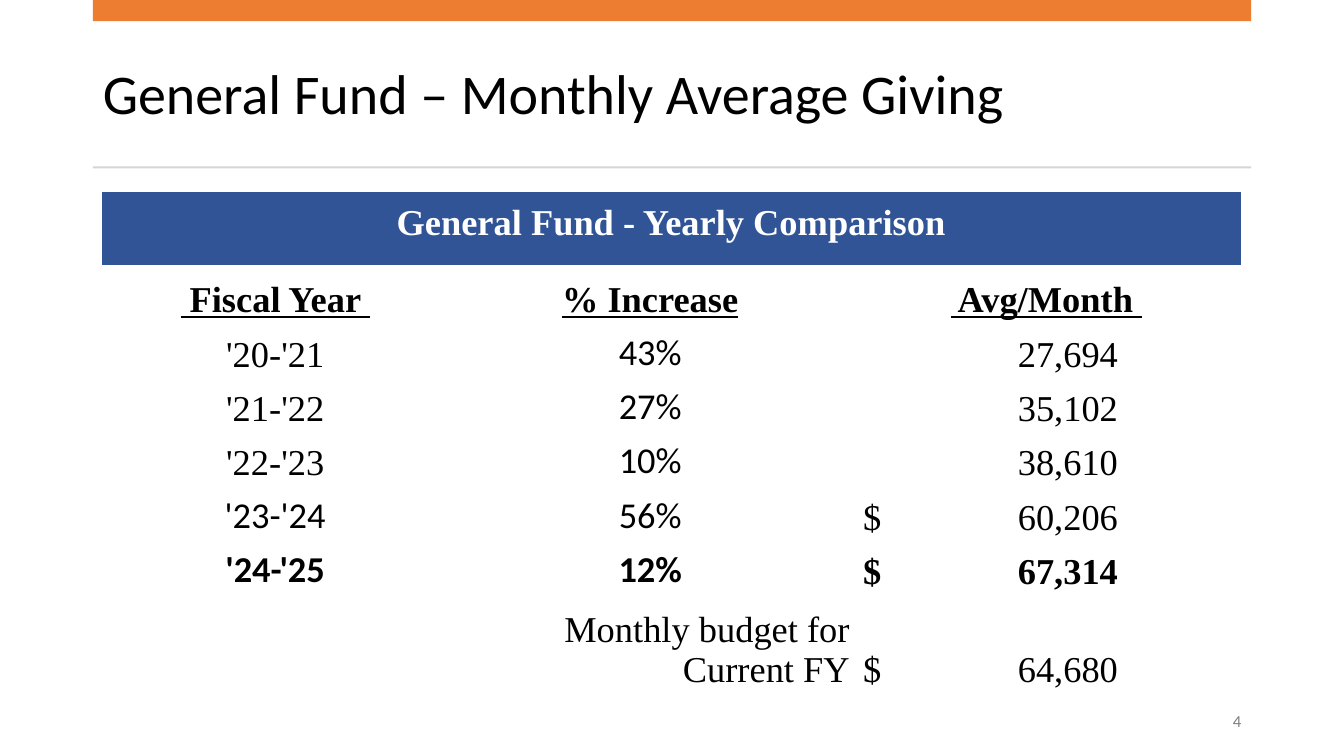
from dataclasses import dataclass

from lxml import etree
from pptx import Presentation
from pptx.dml.color import RGBColor
from pptx.enum.shapes import MSO_SHAPE
from pptx.enum.text import MSO_ANCHOR, MSO_AUTO_SIZE, PP_ALIGN
from pptx.oxml.ns import qn
from pptx.util import Inches, Pt

RECT = MSO_SHAPE.RECTANGLE
LEFT, MID, RIGHT = PP_ALIGN.LEFT, PP_ALIGN.CENTER, PP_ALIGN.RIGHT
TOP, CENTER, BOTTOM = MSO_ANCHOR.TOP, MSO_ANCHOR.MIDDLE, MSO_ANCHOR.BOTTOM
NO_FIT = MSO_AUTO_SIZE.NONE


@dataclass(frozen=True)
class Theme:
    sans: str = "Calibri"
    serif: str = "Times New Roman"
    black: str = "000000"
    white: str = "FFFFFF"
    gray: str = "808080"
    rule: str = "D5D5D5"
    orange: str = "ED7D31"
    blue: str = "305496"
    title: int = 40
    body: int = 26
    small: int = 12


theme = Theme()


def write(frame, text, font=theme.serif, size=theme.body, color=theme.black,
          bold=False, line=False, align=MID, space=None, after=None, tab=None):
    para = frame.paragraphs[0]
    para.alignment = align
    para.line_spacing = space
    if after is not None:
        para.space_after = Pt(after)
    if tab:
        stops = etree.SubElement(para._p.get_or_add_pPr(), qn("a:tabLst"))
        etree.SubElement(stops, qn("a:tab"), pos=str(Inches(tab)), algn="r")
    run = para.add_run()
    run.text = text
    run.font.name = font
    run.font.size = Pt(size)
    run.font.bold = bold
    run.font.underline = line
    run.font.color.rgb = RGBColor.from_string(color)


def pad(cell, left, top, right, bottom):
    cell.margin_left, cell.margin_top = Inches(left), Inches(top)
    cell.margin_right, cell.margin_bottom = Inches(right), Inches(bottom)


deck = Presentation()
deck.slide_width, deck.slide_height = Inches(13.33), Inches(7.5)
slide = deck.slides.add_slide(deck.slide_layouts[5])
shapes = slide.shapes
edge, span = Inches(0.92), Inches(11.49)

title = shapes.title
title.left, title.top = edge, Inches(0.37)
title.width, title.height = span, Inches(1.18)
title.text_frame.auto_size = NO_FIT
title.text_frame.vertical_anchor = CENTER
write(title.text_frame, "General Fund – Monthly Average Giving",
      font=theme.sans, size=theme.title, align=LEFT, space=0.9)

for top, high, color in ((0, 0.21, theme.orange), (1.65, 0.02, theme.rule)):
    bar = shapes.add_shape(RECT, edge, Inches(top), span, Inches(high))
    bar.shadow.inherit = False
    bar.fill.solid()
    bar.fill.fore_color.rgb = RGBColor.from_string(color)
    bar.line.fill.background()

page = shapes.add_textbox(Inches(9.53), Inches(6.95), Inches(2.88), Inches(0.4))
page.text_frame.word_wrap = True
page.text_frame.vertical_anchor = CENTER
write(page.text_frame, "4", font=theme.sans, size=theme.small,
      color=theme.gray, align=RIGHT, after=6)

heads = (" Fiscal Year ", "% Increase", " Avg/Month ")
years = (
    ("'20-'21", "43%", "\t27,694"),
    ("'21-'22", "27%", "\t35,102"),
    ("'22-'23", "10%", "\t38,610"),
    ("'23-'24", "56%", "$\t60,206"),
    ("'24-'25", "12%", "$\t67,314"),
)
widths = (3.44, 4, 3.86)
highs = [0.74] + [0.54] * (len(years) + 1) + [0.97]
last = len(highs) - 1

table = shapes.add_table(len(highs), len(widths), Inches(1.01), Inches(1.9),
                         Inches(sum(widths)), Inches(sum(highs))).table
table.first_row = False
table.horz_banding = False
for col, wide in zip(table.columns, widths):
    col.width = Inches(wide)
for row, high in zip(table.rows, highs):
    row.height = Inches(high)
for cell in table.iter_cells():
    cell.fill.background()
    cell.vertical_anchor = BOTTOM
    pad(cell, 0.02, 0.02, 0.02, 0)

band = table.cell(0, 0)
band.merge(table.cell(0, 2))
band.fill.solid()
band.fill.fore_color.rgb = RGBColor.from_string(theme.blue)
band.vertical_anchor = TOP
pad(band, 0.22, 0.11, 0.22, 0.11)
write(band.text_frame, "General Fund - Yearly Comparison",
      color=theme.white, bold=True)

for col, head in enumerate(heads):
    write(table.cell(1, col).text_frame, head, bold=True, line=True)

sums = []
for row, (year, rise, total) in enumerate(years, 2):
    bold = row == last - 1
    face = theme.sans if row >= last - 2 else theme.serif
    write(table.cell(row, 0).text_frame, year, font=face, bold=bold)
    write(table.cell(row, 1).text_frame, rise, font=theme.sans, bold=bold)
    sums.append((row, total, bold))

write(table.cell(last, 1).text_frame, "Monthly budget for Current FY", align=RIGHT)
sums.append((last, "$\t64,680", False))
for row, total, bold in sums:
    cell = table.cell(row, 2)
    cell.margin_left = Inches(0.11)
    write(cell.text_frame, total, bold=bold, align=LEFT, tab=2.53)

deck.save("out.pptx")
